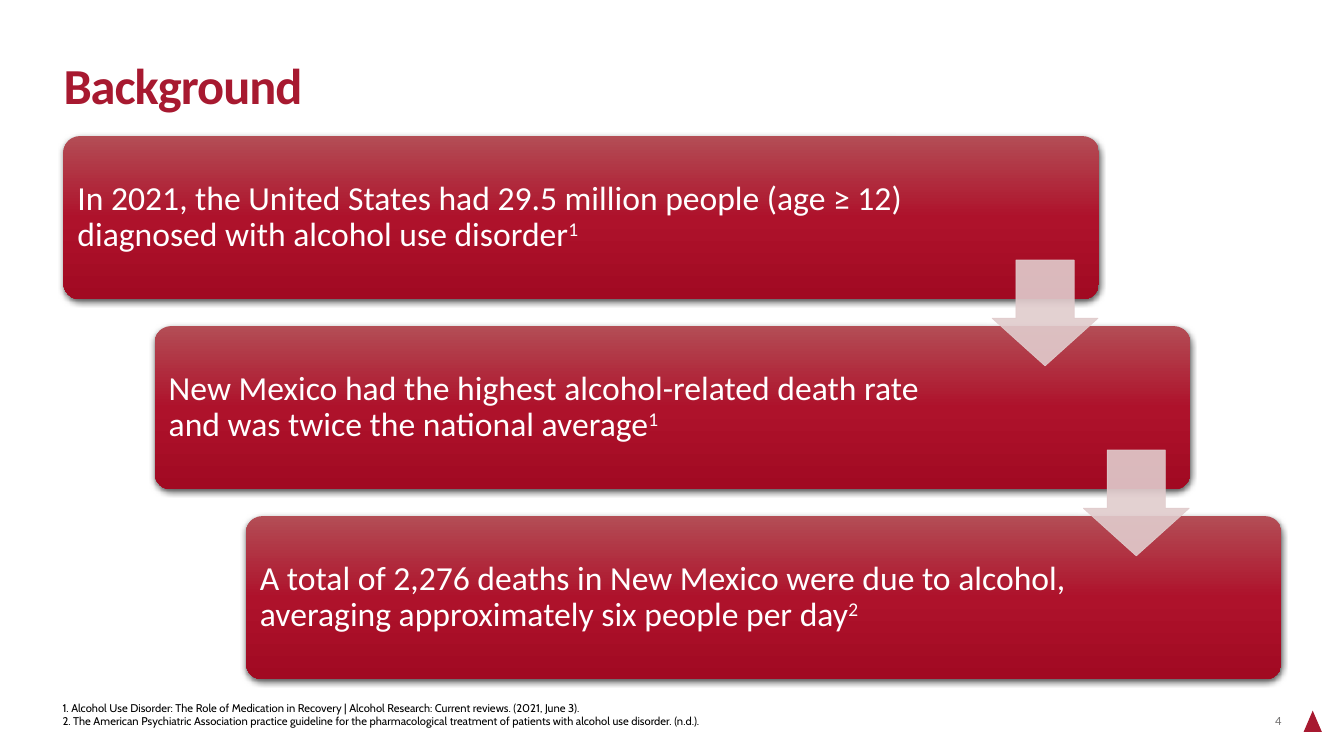
from pptx import Presentation
from pptx.dml.color import RGBColor
from pptx.enum.shapes import MSO_SHAPE
from pptx.enum.text import MSO_ANCHOR, PP_ALIGN
from pptx.oxml import parse_xml
from pptx.oxml.ns import nsdecls, qn
from pptx.util import Inches, Pt
from lxml.etree import SubElement

TITLE = "Background"
FACTS = [
    ("In 2021, the United States had 29.5 million people (age ≥ 12) "
     "diagnosed with alcohol use disorder", "1", 8.52),
    ("New Mexico had the highest alcohol-related death rate "
     "and was twice the national average", "1", 8.21),
    ("A total of 2,276 deaths in New Mexico were due to alcohol, "
     "averaging approximately six people per day", "2", 8.21),
]
NOTES = [
    "1. Alcohol Use Disorder: The Role of Medication in Recovery | "
    "Alcohol Research: Current reviews. (2021, June 3).",
    "2. The American Psychiatric Association practice guideline for the "
    "pharmacological treatment of patients with alcohol use disorder. (n.d.).",
]
PAGE = "4"
COLORS = {
    "brand": "A71930", "gray": "363434", "black": "000000",
    "white": "FFFFFF", "arrow": "E1CCCD",
    "top": "B34D55", "mid": "AE122B", "low": "A10A22",
}
LEFT, TOP = 0.63, 1.35
WIDE, HIGH = 10.27, 1.62
STEP_X, STEP_Y = 0.905, 1.885
PAD = 0.04
ARROW = 1.05
ARROW_X, ARROW_Y = 9.84, 2.58


def paint(fill, name, alpha=None):
    fill.solid()
    fill.fore_color.rgb = RGBColor.from_string(COLORS[name])
    if alpha:
        node = fill._xPr.find(qn("a:solidFill"))[0]
        SubElement(node, qn("a:alpha")).set("val", str(alpha * 1000))


def style(run, size, name, font="Calibri", alpha=None):
    run.font.size = Pt(size)
    run.font.name = font
    paint(run.font.fill, name, alpha)


def frame(shape, anchor, side, edge, wrap=True):
    text = shape.text_frame
    text.word_wrap = wrap
    text.vertical_anchor = anchor
    text.margin_left = text.margin_right = Inches(side)
    text.margin_top = text.margin_bottom = Inches(edge)
    return text


def add_box(slide, x, y, w, h):
    return slide.shapes.add_textbox(Inches(x), Inches(y), Inches(w), Inches(h))


def add_form(slide, kind, x, y, w, h):
    form = slide.shapes.add_shape(kind, Inches(x), Inches(y), Inches(w), Inches(h))
    form.shadow.inherit = False
    return form


def add_card(slide, x, y):
    card = add_form(slide, MSO_SHAPE.ROUNDED_RECTANGLE, x, y, WIDE, HIGH)
    card.adjustments[0] = 0.1
    card.line.fill.background()
    stops = "".join(
        f'<a:gs pos="{i * 50000}"><a:srgbClr val="{COLORS[name]}"/></a:gs>'
        for i, name in enumerate(("top", "mid", "low")))
    props = card._element.spPr
    props.find(qn("a:prstGeom")).addnext(parse_xml(
        f'<a:gradFill {nsdecls("a")} rotWithShape="1"><a:gsLst>{stops}</a:gsLst>'
        '<a:lin ang="5400000" scaled="0"/></a:gradFill>'))
    props.find(qn("a:effectLst")).append(parse_xml(
        f'<a:outerShdw {nsdecls("a")} blurRad="{Pt(4.5)}" dist="{Pt(1.5)}" '
        f'dir="5400000" rotWithShape="0"><a:srgbClr val="{COLORS["black"]}">'
        '<a:alpha val="63000"/></a:srgbClr></a:outerShdw>'))


def add_fact(slide, x, y, words, mark, wide):
    box = add_box(slide, x + PAD, y + PAD, wide, HIGH - 2 * PAD)
    para = frame(box, MSO_ANCHOR.MIDDLE, 0.1, 0.1).paragraphs[0]
    para.line_spacing = 0.9
    for part in (words, mark):
        run = para.add_run()
        run.text = part
        style(run, 24, "white")
    run.font._element.set("baseline", "30000")


def add_arrow(slide, x, y):
    arrow = add_form(slide, MSO_SHAPE.DOWN_ARROW, x, y, ARROW, ARROW)
    arrow.adjustments[0] = 0.55
    arrow.adjustments[1] = 0.45
    paint(arrow.fill, "arrow", 90)
    paint(arrow.line.fill, "arrow", 90)
    arrow.line.width = Pt(0.5)


def add_title(slide):
    title = slide.shapes.title
    title.left, title.top = Inches(LEFT), Inches(0.6)
    title.width, title.height = Inches(12.08), Inches(0.36)
    text = frame(title, MSO_ANCHOR.TOP, 0, 0)
    text.text = TITLE
    para = text.paragraphs[0]
    para.alignment = PP_ALIGN.LEFT
    para.line_spacing = 0.9
    run = para.runs[0]
    style(run, 36, "brand")
    run.font.bold = True
    run.font._element.set("spc", "-70")


def add_foot(slide):
    mark = add_form(slide, MSO_SHAPE.ISOSCELES_TRIANGLE, 12.93, 7.05, 0.18, 0.21)
    paint(mark.fill, "brand")
    mark.line.fill.background()

    page = add_box(slide, 12.18, 7.03, 0.53, 0.23)
    text = frame(page, MSO_ANCHOR.BOTTOM, 0, 0.04, False)
    text.text = PAGE
    para = text.paragraphs[0]
    para.alignment = PP_ALIGN.RIGHT
    para.space_after = Pt(6)
    style(para.runs[0], 9, "gray", alpha=70)

    notes = add_box(slide, 0.62, 7.03, 10.28, 0.23)
    text = frame(notes, MSO_ANCHOR.BOTTOM, 0, 0.04)
    text.text = "\n".join(NOTES)
    for para in text.paragraphs:
        style(para.runs[0], 8, "black", "Cabin")


def main():
    deck = Presentation()
    deck.slide_width, deck.slide_height = Inches(13.33), Inches(7.5)
    slide = deck.slides.add_slide(deck.slide_layouts[5])
    add_title(slide)
    add_foot(slide)
    for i, (words, mark, wide) in enumerate(FACTS):
        x, y = LEFT + i * STEP_X, TOP + i * STEP_Y
        add_card(slide, x, y)
        add_fact(slide, x, y, words, mark, wide)
    for i in range(len(FACTS) - 1):
        add_arrow(slide, ARROW_X + i * STEP_X, ARROW_Y + i * STEP_Y)
    deck.save("out.pptx")


if __name__ == "__main__":
    main()
